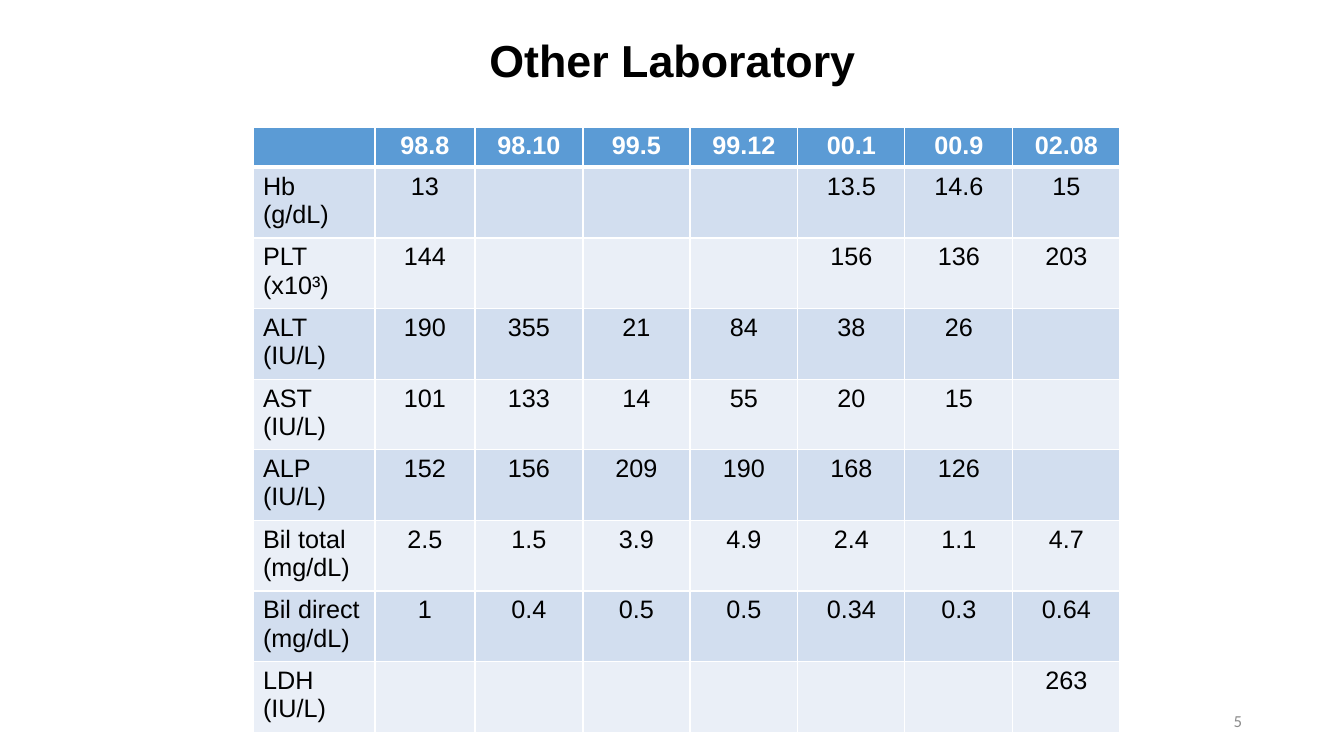
"""Build the laboratory results slide."""
import pptx
import pptx.dml.color
import pptx.enum.text
import pptx.oxml
import pptx.oxml.ns
import pptx.util

EMU_PER_PX = 914400 / 100.8
COLORS = {
    "white": "FFFFFF",
    "black": "000000",
    "gray": "8C8C8C",
    "header": "5B9BD5",
    "odd": "D2DEEF",
    "even": "EAEFF7",
}
LEFT = pptx.enum.text.PP_ALIGN.LEFT
CENTER = pptx.enum.text.PP_ALIGN.CENTER
RIGHT = pptx.enum.text.PP_ALIGN.RIGHT


def px(length):
    return pptx.util.Emu(round(length * EMU_PER_PX))


def write(text, frame, size=18, font="Arial", color="black", bold=False, align=CENTER, spacing=None):
    frame.word_wrap = True
    for index, line in enumerate(text.split("\n")):
        para = frame.add_paragraph() if index else frame.paragraphs[0]
        para.alignment = align
        para.line_spacing = spacing
        span = para.add_run()
        span.text = line
        span.font.size = pptx.util.Pt(size)
        span.font.name = font
        span.font.bold = bold
        span.font.color.rgb = pptx.dml.color.RGBColor.from_string(COLORS[color])


deck = pptx.Presentation()
deck.slide_width = px(1344)
deck.slide_height = px(756)
page = deck.slides.add_slide(deck.slide_layouts[6])

number_box = page.shapes.add_textbox(px(950), px(701), px(302), px(40))
number_box.text_frame.vertical_anchor = pptx.enum.text.MSO_ANCHOR.MIDDLE
write("5", number_box.text_frame, size=12, font="Calibri", color="gray", align=RIGHT)

results = [
    ["", "98.8", "98.10", "99.5", "99.12", "00.1", "00.9", "02.08"],
    ["Hb (g/dL)", "13", "", "", "", "13.5", "14.6", "15"],
    ["PLT (x10³)", "144", "", "", "", "156", "136", "203"],
    ["ALT (IU/L)", "190", "355", "21", "84", "38", "26", ""],
    ["AST (IU/L)", "101", "133", "14", "55", "20", "15", ""],
    ["ALP (IU/L)", "152", "156", "209", "190", "168", "126", ""],
    ["Bil total (mg/dL)", "2.5", "1.5", "3.9", "4.9", "2.4", "1.1", "4.7"],
    ["Bil direct (mg/dL)", "1", "0.4", "0.5", "0.5", "0.34", "0.3", "0.64"],
    ["LDH\n(IU/L)", "", "", "", "", "", "", "263"],
]
column_widths = [122, 100] + [108, 107] * 3
row_heights = [38] + [66] * 8

table = page.shapes.add_table(
    len(row_heights), len(column_widths), px(253), px(127), px(sum(column_widths)), px(sum(row_heights))
).table
table.horz_banding = False
for column, width in zip(table.columns, column_widths):
    column.width = px(width)

for row_index, values in enumerate(results):
    table.rows[row_index].height = px(row_heights[row_index])
    is_header = row_index == 0
    band = "header" if is_header else "odd" if row_index % 2 else "even"
    thick_side = {0: "lnB", 1: "lnT"}.get(row_index)
    for column_index, value in enumerate(values):
        cell = table.cell(row_index, column_index)
        properties = cell._tc.get_or_add_tcPr()
        for side in ("lnL", "lnR", "lnT", "lnB"):
            line_width = pptx.util.Pt(3 if side == thick_side else 1)
            properties.append(pptx.oxml.parse_xml(
                f'<a:{side} {pptx.oxml.ns.nsdecls("a")} w="{line_width}"><a:solidFill>'
                f'<a:srgbClr val="{COLORS["white"]}"/></a:solidFill></a:{side}>'
            ))
        cell.fill.solid()
        cell.fill.fore_color.rgb = pptx.dml.color.RGBColor.from_string(COLORS[band])
        if value:
            write(
                value,
                cell.text_frame,
                color="white" if is_header else "black",
                bold=is_header,
                align=CENTER if column_index else LEFT,
            )

title_box = page.shapes.add_textbox(px(93), px(34), px(1159), px(115))
write("Other Laboratory", title_box.text_frame, size=32, bold=True, spacing=0.9)

deck.save("out.pptx")
